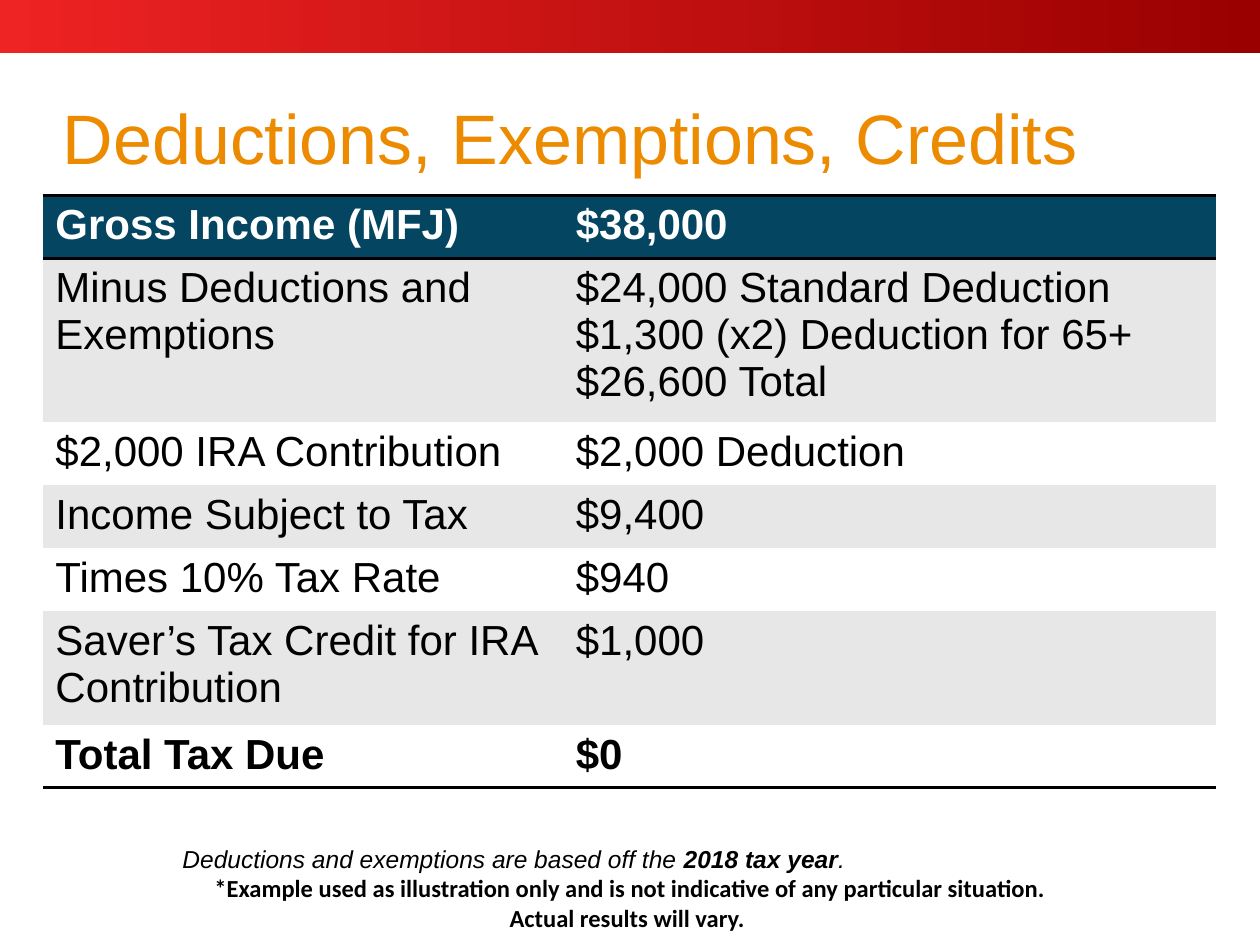
from typing import NamedTuple

import pptx
import pptx.dml.color
import pptx.enum.dml
import pptx.enum.shapes
import pptx.enum.text
import pptx.oxml
import pptx.oxml.ns
import pptx.util

Inches = pptx.util.Inches
Pt = pptx.util.Pt
RGBColor = pptx.dml.color.RGBColor

RED = RGBColor(0xEE, 0x23, 0x23)
MAROON = RGBColor(0x9A, 0x00, 0x00)
ORANGE = RGBColor(0xED, 0x8B, 0x00)
NAVY = RGBColor(0x04, 0x45, 0x61)
GRAY = RGBColor(0xE7, 0xE7, 0xE7)
WHITE = RGBColor(0xFF, 0xFF, 0xFF)
BLACK = RGBColor(0x00, 0x00, 0x00)

PLAIN_STYLE = "{2D5ABB26-0587-4C30-8999-92F81FD0307C}"
COLS = (4.13, 5.18)


class Row(NamedTuple):
    label: str
    value: str
    high: float = 0.47
    bold: bool = False
    edges: tuple[str, ...] = ()


ROWS = (
    Row("Gross Income (MFJ)", "$38,000", bold=True, edges=("lnT", "lnB")),
    Row(
        "Minus Deductions and Exemptions",
        "$24,000 Standard Deduction\n$1,300 (x2) Deduction for 65+\n$26,600 Total",
        high=1.21,
    ),
    Row("$2,000 IRA Contribution", "$2,000 Deduction"),
    Row("Income Subject to Tax", "$9,400"),
    Row("Times 10% Tax Rate", "$940"),
    Row("Saver’s Tax Credit for IRA Contribution", "$1,000", high=0.85),
    Row("Total Tax Due", "$0", bold=True, edges=("lnB",)),
)


class Span(NamedTuple):
    text: str
    face: str = "Arial"
    bold: bool = False
    italic: bool = True


NOTE = (
    Span("Deductions and exemptions are based off the "),
    Span("2018 tax year", bold=True),
    Span("."),
)
CAVEAT = Span(
    "*Example used as illustration only and is not indicative of any "
    "particular situation. Actual results will vary. ",
    face="Calibri", bold=True, italic=False,
)


def style(font, size: float, color: RGBColor, face: str = "Arial",
          bold: bool = False, italic: bool = False) -> None:
    font.name = face
    font.size = Pt(size)
    font.bold = bold
    font.italic = italic
    font.color.rgb = color


def add_band(slide) -> None:
    band = slide.shapes.add_shape(
        pptx.enum.shapes.MSO_SHAPE.RECTANGLE, 0, 0, Inches(10), Inches(0.42))
    band.shadow.inherit = False
    band.line.fill.background()
    band.fill.gradient()
    band.fill.gradient_angle = 0
    for stop, color, spot in zip(band.fill.gradient_stops, (RED, MAROON), (0, 1)):
        stop.color.rgb = color
        stop.position = spot


def add_title(slide) -> None:
    box = slide.shapes.add_textbox(Inches(0.4), Inches(0.4), Inches(9.59), Inches(1.45))
    frame = box.text_frame
    frame.word_wrap = True
    frame.vertical_anchor = pptx.enum.text.MSO_ANCHOR.MIDDLE
    frame.text = "Deductions, Exemptions, Credits"
    para = frame.paragraphs[0]
    para.line_spacing = 0.9
    style(para.runs[0].font, 40, ORANGE)


def add_edge(cell, edge: str) -> None:
    """Rule one side of a cell; its line must come before the fill."""
    props = cell._tc.get_or_add_tcPr()
    line = pptx.oxml.parse_xml(
        f'<a:{edge} {pptx.oxml.ns.nsdecls("a")} w="{Pt(2)}"><a:solidFill>'
        f'<a:srgbClr val="{BLACK}"/></a:solidFill></a:{edge}>')
    props.insert(len(props) - 1, line)


def fill_cell(cell, text: str, row: Row, fill: RGBColor, ink: RGBColor) -> None:
    cell.fill.solid()
    cell.fill.fore_color.rgb = fill
    for edge in row.edges:
        add_edge(cell, edge)
    cell.text_frame.text = text
    for para in cell.text_frame.paragraphs:
        style(para.runs[0].font, 24, ink, bold=row.bold)


def add_grid(slide) -> None:
    high = sum(row.high for row in ROWS)
    frame = slide.shapes.add_table(
        len(ROWS), len(COLS), Inches(0.34), Inches(1.55), Inches(sum(COLS)), Inches(high))
    table = frame.table
    table._tbl.tblPr.find(pptx.oxml.ns.qn("a:tableStyleId")).text = PLAIN_STYLE
    for col, wide in zip(table.columns, COLS):
        col.width = Inches(wide)
    for at, row in enumerate(ROWS):
        table.rows[at].height = Inches(row.high)
        fill = NAVY if at == 0 else GRAY if at % 2 else WHITE
        ink = WHITE if at == 0 else BLACK
        for col, text in enumerate((row.label, row.value)):
            fill_cell(table.cell(at, col), text, row, fill, ink)


def add_span(para, span: Span) -> None:
    run = para.add_run()
    run.text = span.text
    style(run.font, 14, BLACK, span.face, span.bold, span.italic)


def add_notes(slide) -> None:
    box = slide.shapes.add_textbox(Inches(1.35), Inches(6.65), Inches(7.3), Inches(1.04))
    frame = box.text_frame
    frame.word_wrap = True
    for span in NOTE:
        add_span(frame.paragraphs[0], span)
    para = frame.add_paragraph()
    para.alignment = pptx.enum.text.PP_ALIGN.CENTER
    add_span(para, CAVEAT)


def main() -> None:
    deck = pptx.Presentation()
    deck.slide_width = Inches(10)
    deck.slide_height = Inches(7.5)
    slide = deck.slides.add_slide(deck.slide_layouts[6])
    add_band(slide)
    add_title(slide)
    add_grid(slide)
    add_notes(slide)
    deck.save("out.pptx")


if __name__ == "__main__":
    main()
